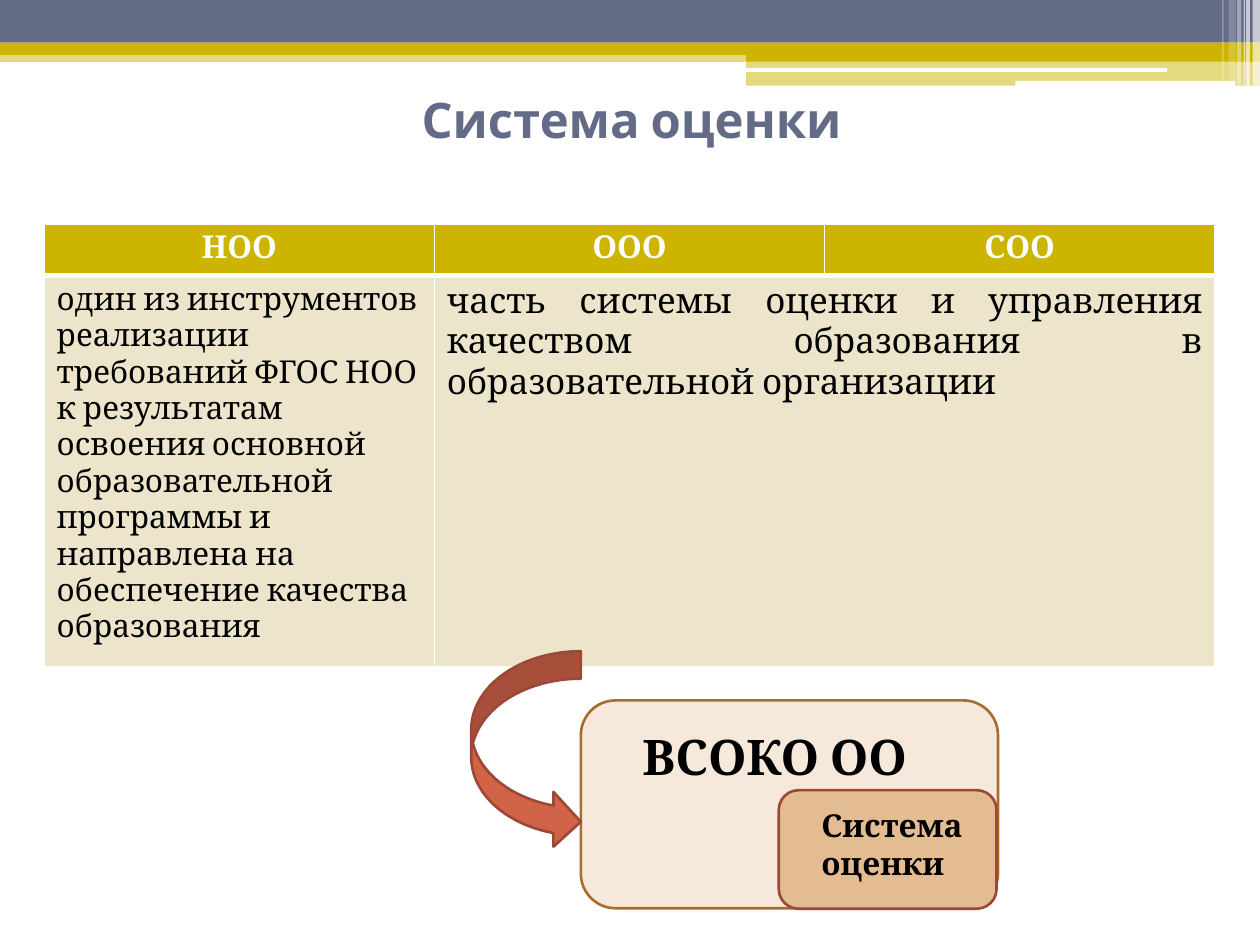
from dataclasses import dataclass

from lxml import etree
from pptx import Presentation, util as u
from pptx.dml.color import RGBColor
from pptx.enum import shapes, text
from pptx.oxml import parse_xml
from pptx.oxml.ns import nsdecls, qn

RECT = shapes.MSO_SHAPE.RECTANGLE
ROUND = shapes.MSO_SHAPE.ROUNDED_RECTANGLE
CURVED_ARROW = shapes.MSO_SHAPE.CURVED_RIGHT_ARROW
LEFT, CENTER, JUSTIFY = text.PP_ALIGN.LEFT, text.PP_ALIGN.CENTER, text.PP_ALIGN.JUSTIFY


@dataclass(frozen=True)
class Theme:
    slate: str = "646B86"
    gold: str = "CCB400"
    white: str = "FFFFFF"
    black: str = "000000"
    sand: str = "ECE5CC"
    cream: str = "F6E9DB"
    tan: str = "E3BC92"
    red: str = "D16349"
    brown: str = "A96D2B"
    dark_red: str = "9B4936"
    heading: str = "Cabin"
    body: str = "Cambria"
    large: int = 28
    medium: int = 20
    small: int = 18


class SlideBuilder:
    """Draw styled elements on the current slide, with lengths in centimetres."""

    def __init__(self, slide, theme):
        self.slide, self.theme = slide, theme

    def shape(self, kind, box, fill, line=None, opacity=100):
        shape = self.slide.shapes.add_shape(kind, *map(u.Cm, box))
        shape.shadow.inherit = False
        shape.fill.solid()
        shape.fill.fore_color.rgb = RGBColor.from_string(fill)
        if opacity < 100:
            color = shape.element.spPr.find(qn("a:solidFill"))[0]
            etree.SubElement(color, qn("a:alpha")).set("val", str(opacity * 1000))
        if line:
            shape.line.color.rgb = RGBColor.from_string(line)
            shape.line.width = u.Pt(1.5)
        else:
            shape.line.fill.background()
        return shape

    def wording(self, frame, words, size, color, bold=True, font=None, align=LEFT):
        paragraph = frame.paragraphs[0]
        paragraph.alignment = align
        run = paragraph.add_run()
        run.text = words
        values = {"name": font or self.theme.body, "size": u.Pt(size), "bold": bold}
        for name, value in values.items():
            setattr(run.font, name, value)
        run.font.color.rgb = RGBColor.from_string(color)

    def label(self, box, words, size, color, anchor=text.MSO_ANCHOR.TOP, **style):
        frame = self.slide.shapes.add_textbox(*map(u.Cm, box)).text_frame
        for name, value in {"word_wrap": True, "vertical_anchor": anchor}.items():
            setattr(frame, name, value)
        self.wording(frame, words, size, color, **style)

    def cell(self, cell, fill, top, bottom):
        properties = cell._tc.get_or_add_tcPr()
        for side, width in {"L": 1, "R": 1, "T": top, "B": bottom}.items():
            properties.append(parse_xml(
                f'<a:ln{side} {nsdecls("a")} w="{u.Pt(width)}"><a:solidFill>'
                f'<a:srgbClr val="{self.theme.white}"/></a:solidFill></a:ln{side}>'))
        cell.fill.solid()
        cell.fill.fore_color.rgb = RGBColor.from_string(fill)

    def table(self, box, heights, headers, bodies):
        theme = self.theme
        table = self.slide.shapes.add_table(
            len(heights), len(headers), *map(u.Cm, box)).table
        for row, height in zip(table.rows, heights):
            row.height = u.Cm(height)
        for column, header in enumerate(headers):
            head, body = table.cell(0, column), table.cell(1, column)
            self.cell(head, theme.gold, top=1, bottom=3)
            self.cell(body, theme.sand, top=3, bottom=1)
            self.wording(head.text_frame, header, theme.small, theme.white, align=CENTER)
        table.cell(1, 1).merge(table.cell(1, 2))
        for column, (words, size, align) in enumerate(bodies):
            self.wording(table.cell(1, column).text_frame, words, size,
                         theme.black, bold=False, align=align)


def main():
    theme = Theme()
    presentation = Presentation()
    presentation.slide_width, presentation.slide_height = u.Cm(25.4), u.Cm(19.05)
    builder = SlideBuilder(
        presentation.slides.add_slide(presentation.slide_layouts[6]), theme)

    for box, fill, opacity in (
        ((0, 1.02, 25.4, 0.23), theme.gold, 50),
        ((0, 0, 25.4, 0.86), theme.slate, 100),
        ((0, 0.86, 25.4, 0.25), theme.gold, 100),
        ((15.04, 0.99, 10.36, 0.25), theme.gold, 100),
        ((15.04, 1.22, 10.36, 0.51), theme.gold, 50),
    ):
        builder.shape(RECT, box, fill, opacity=opacity)
    for box in ((15.02, 1.37, 8.51, 0.08), (20.47, 1.63, 4.44, 0.1)):
        builder.shape(ROUND, box, theme.white)
    for left, width, height, opacity in (
        (25.25, 0.15, 1.73, 65), (25.12, 0.08, 1.73, 65), (25.07, 0.03, 1.73, 60),
        (24.94, 0.08, 1.73, 40), (24.77, 0.15, 1.63, 20), (24.64, 0.03, 1.63, 30),
    ):
        builder.shape(RECT, (left, 0, width, height), theme.white, opacity=opacity)

    builder.label((1.3, 0.91, 22.86, 2.97), "Система оценки", theme.large, theme.slate,
                  anchor=text.MSO_ANCHOR.MIDDLE, font=theme.heading, align=CENTER)
    builder.table(
        (0.89, 4.52, 23.6, 8.59), (1.04, 7.55), ("НОО", "ООО", "СОО"),
        (("один из инструментов реализации требований ФГОС НОО к результатам освоения "
          "основной образовательной программы и направлена на обеспечение качества "
          "образования", theme.small, LEFT),
         ("часть системы оценки и управления качеством образования в образовательной "
          "организации ", theme.medium, JUSTIFY)))

    builder.shape(ROUND, (11.71, 14.12, 8.41, 4.19), theme.cream, theme.brown)
    builder.label((12.7, 14.53, 7.19, 1.45), "ВСОКО ОО", theme.large, theme.black)
    builder.shape(ROUND, (15.7, 15.93, 4.39, 2.39), theme.tan, theme.dark_red)
    builder.label((16.31, 16.13, 3.4, 1.8), "Система оценки", theme.small, theme.black)
    builder.shape(CURVED_ARROW, (9.5, 13.13, 2.21, 3.99), theme.red, theme.dark_red)
    presentation.save("out.pptx")


if __name__ == "__main__":
    main()
